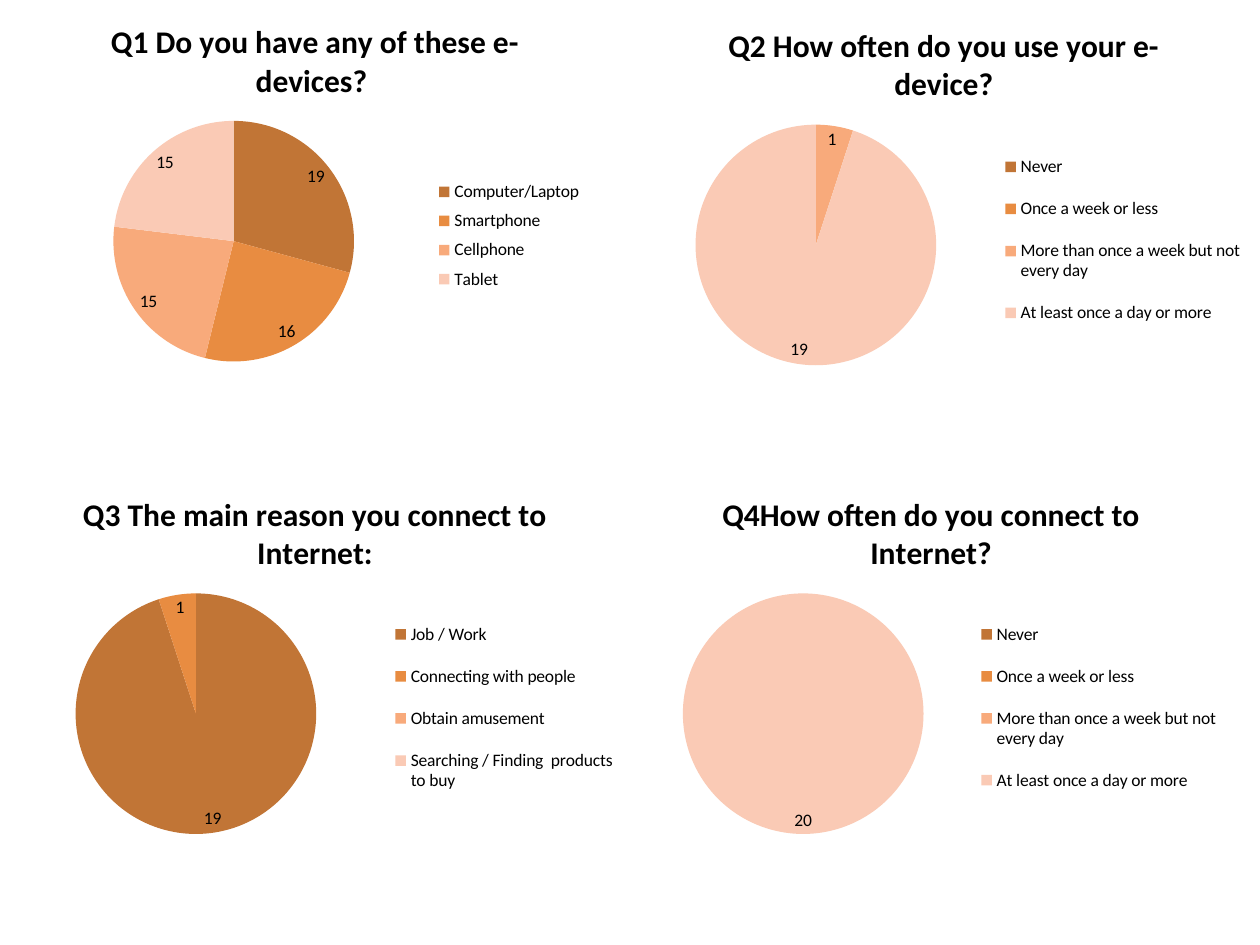
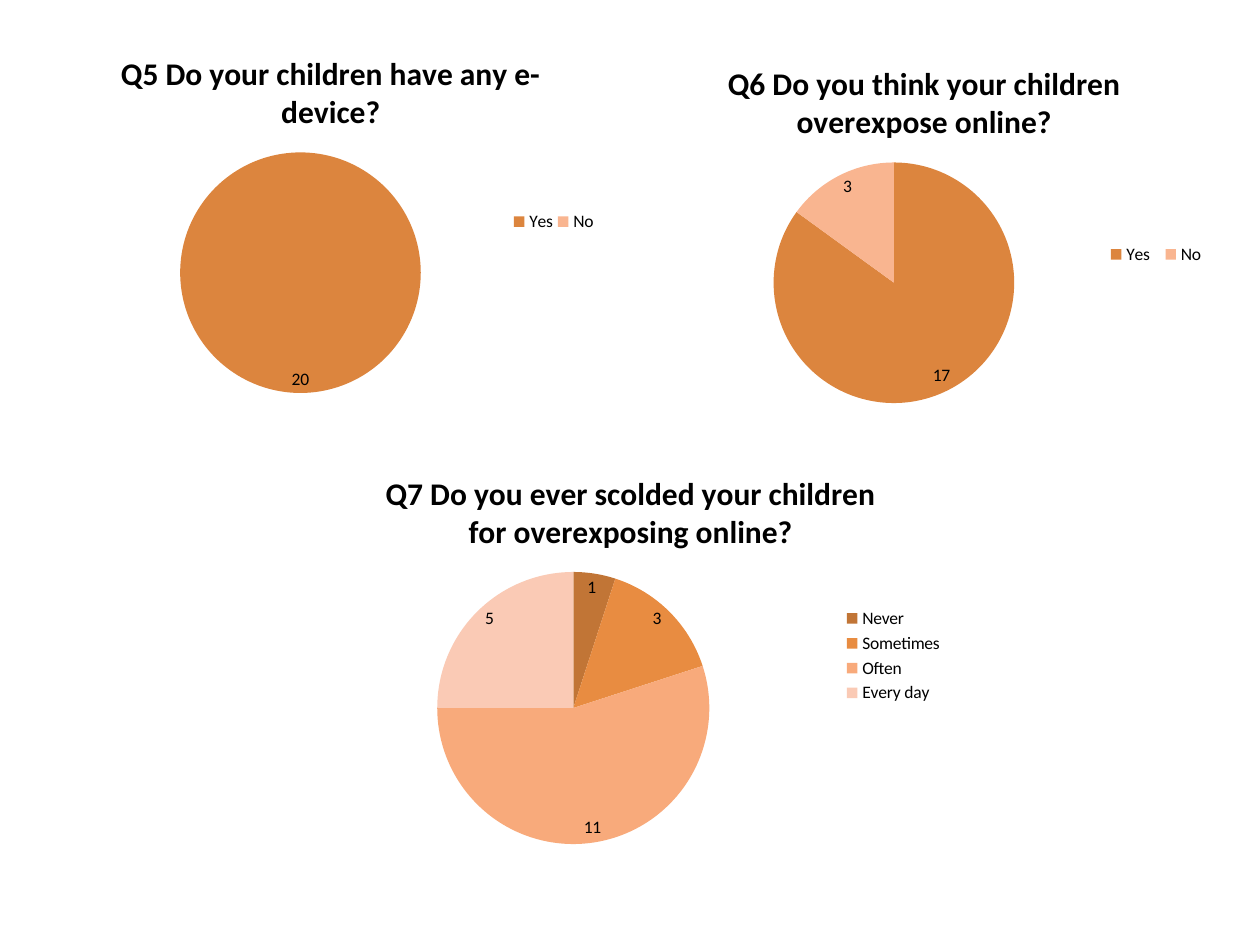
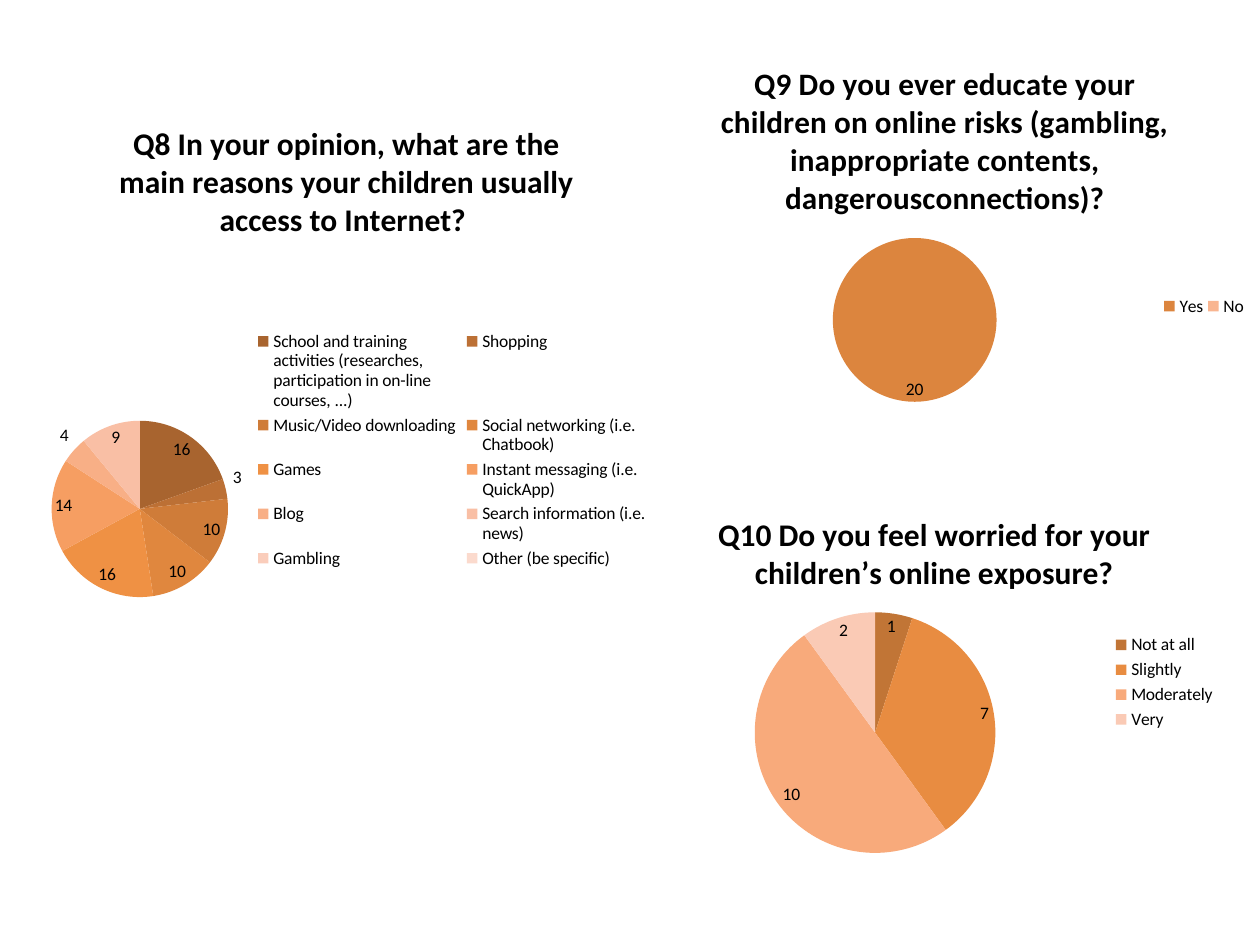
from lxml import etree
from pptx import Presentation
from pptx.chart.data import CategoryChartData
from pptx.dml.color import RGBColor
from pptx.enum.chart import XL_CHART_TYPE, XL_LABEL_POSITION, XL_LEGEND_POSITION
from pptx.oxml.ns import qn
from pptx.util import Inches, Pt

PIE = XL_CHART_TYPE.PIE
BEST_FIT = XL_LABEL_POSITION.BEST_FIT
RIGHT = XL_LEGEND_POSITION.RIGHT

COLORS = {
    "text": "000000",
    "brown": "A8642F", "rust": "BC7035", "copper": "CF7C39",
    "orange": "E0873E", "bright": "EF9144", "apricot": "F69E62",
    "peach": "F8AF86", "salmon": "F9BFA5", "blush": "FACDBB", "pale": "FBDACD",
    "first of 4": "C17536", "second of 4": "E88C41",
    "third of 4": "F8AA7B", "last of 4": "FACAB5",
    "yes": "DC853E", "no": "F9B590",
}
# Shades for a pie, chosen by its number of answers
SHADES = {
    2: ["yes", "no"],
    4: ["first of 4", "second of 4", "third of 4", "last of 4"],
    10: ["brown", "rust", "copper", "orange", "bright",
         "apricot", "peach", "salmon", "blush", "pale"],
}
TITLE_FONT = {"name": "Calibri", "bold": True}
BODY_FONT = {"name": "Calibri", "size": Pt(10), "bold": False}

YES_NO = ["Yes", "No"]
FREQUENCY = ["Never", "Once a week or less",
             "More than once a week but not every day",
             "At least once a day or more"]
REASONS = ["School and training activities (researches, participation in "
           "on-line courses, ...)", "Shopping", "Music/Video downloading",
           "Social networking (i.e. Chatbook)", "Games",
           "Instant messaging (i.e. QuickApp)", "Blog",
           "Search information (i.e. news)", "Gambling",
           "Other (be specific)"]

# Per chart: title, answers, counts, box on the slide,
# pie (left, top, diameter) and legend (left, top, width, height) in the box;
# a legend of None is placed automatically; a title size may follow
SLIDES = [
    [
        ("Q1 Do you have any of these e-devices? ",
         ["Computer/Laptop", "Smartphone", "Cellphone", "Tablet"],
         [19, 16, 15, 15], (0, 0, 5, 3),
         (0.9, 0.96, 1.91), (3.41, 1.37, 1.26, 1)),
        ("Q2 How often do you use your e-device?", FREQUENCY,
         [0, 0, 1, 19], (4.99, 0.03, 5, 3),
         (0.53, 0.96, 1.91), (2.93, 1.04, 1.98, 1.67)),
        ("Q3 The main reason you connect to Internet:",
         ["Job / Work", "Connecting with people", "Obtain amusement",
          "Searching / Finding  products to buy"],
         [19, 1, 0, 0], (0, 3.75, 5, 3),
         (0.6, 0.96, 1.91), (3.11, 1.03, 1.78, 1.67)),
        ("Q4How often do you connect to Internet?", FREQUENCY,
         [0, 0, 0, 20], (5.03, 3.75, 4.72, 3),
         (0.39, 0.96, 1.91), (2.69, 1.03, 2, 1.67)),
    ],
    [
        ("Q5 Do your children have any e-device?", YES_NO,
         [20, 0], (0.25, 0.25, 4.75, 3),
         (1.18, 0.96, 1.91), (3.79, 1.39, 0.71, 0.24)),
        ("Q6 Do you think your children overexpose online?", YES_NO,
         [17, 3], (5, 0.33, 4.67, 3),
         (1.14, 0.96, 1.91), (3.74, 1.53, 0.87, 0.32)),
        ("Q7 Do you ever scolded your children for overexposing online?",
         ["Never", "Sometimes", "Often", "Every day"],
         [1, 3, 11, 5], (2.42, 3.58, 5.17, 3.25),
         (1.05, 0.96, 2.16), (4.26, 1.21, 0.82, 0.83)),
    ],
    [
        ("Q8 In your opinion, what are the main reasons your children "
         "usually access to Internet? ", REASONS,
         [16, 3, 10, 10, 16, 14, 4, 9, 0, 0], (0.25, 0.75, 5, 5.64),
         (0.16, 2.59, 1.4), None),
        ("Q9 Do you ever educate your children on online risks (gambling, "
         "inappropriate contents, dangerousconnections)?", YES_NO,
         [20, 0], (5, 0.33, 5, 3),
         (1.61, 1.56, 1.3), (4.2, 1.98, 0.71, 0.24), 17.8),
        ("Q10 Do you feel worried for your children’s online exposure?",
         ["Not at all", "Slightly", "Moderately", "Very"],
         [1, 7, 10, 2], (5.08, 3.91, 4.67, 3),
         (0.91, 0.95, 1.91), (3.74, 1.09, 0.84, 0.83)),
    ],
]


def set_font(font, values):
    for name, value in values.items():
        setattr(font, name, value)
    font.color.rgb = RGBColor.from_string(COLORS["text"])


def manual_layout(part, box, size, inner=False):
    """Return a c:layout that puts part at box, in inches of a chart of size."""
    for old in part.findall(qn("c:layout")):
        part.remove(old)
    layout = etree.Element(qn("c:layout"))
    manual = etree.SubElement(layout, qn("c:manualLayout"))
    values = [("layoutTarget", "inner")] if inner else []
    values += [("xMode", "edge"), ("yMode", "edge")]
    for name, length, whole in zip("xywh", box, size * 2):
        values.append((name, f"{length / whole:.4f}"))
    for name, value in values:
        etree.SubElement(manual, qn(f"c:{name}")).set("val", value)
    return layout


def add_pie(slide, title, answers, counts, box, pie, legend_box,
            title_size=18):
    data = CategoryChartData()
    data.categories = answers
    data.add_series("Series 1", counts)
    chart = slide.shapes.add_chart(PIE, *map(Inches, box), data).chart
    set_font(chart.font, BODY_FONT)

    chart.has_title = True
    tf = chart.chart_title.text_frame
    tf.text = title
    set_font(tf.paragraphs[0].runs[0].font,
             {**TITLE_FONT, "size": Pt(title_size)})

    plot = chart.plots[0]
    plot.vary_by_categories = True
    for i, shade in enumerate(SHADES[len(answers)]):
        fill = plot.series[0].points[i].format.fill
        fill.solid()
        fill.fore_color.rgb = RGBColor.from_string(COLORS[shade])
    plot.has_data_labels = True
    labels = plot.data_labels
    # The empty sections of the number format hide zero counts
    formats = {"show_value": True, "show_percentage": False,
               "number_format": "0;;;", "number_format_is_linked": False,
               "position": BEST_FIT}
    for name, value in formats.items():
        setattr(labels, name, value)
    set_font(labels.font, BODY_FONT)

    chart.has_legend = True
    legend = chart.legend
    legend.position = RIGHT
    legend.include_in_layout = False
    set_font(legend.font, BODY_FONT)

    size = box[2:]
    left, top, diameter = pie
    plot_area = chart._chartSpace.chart.plotArea
    plot_area.insert(0, manual_layout(
        plot_area, (left, top, diameter, diameter), size, inner=True))
    if legend_box:
        el = legend._element
        layout = manual_layout(el, legend_box, size)
        el.find(qn("c:legendPos")).addnext(layout)


def main():
    prs = Presentation()
    prs.slide_width, prs.slide_height = Inches(10), Inches(7.5)
    for charts in SLIDES:
        slide = prs.slides.add_slide(prs.slide_layouts[6])
        for chart in charts:
            add_pie(slide, *chart)
    prs.save("out.pptx")


if __name__ == "__main__":
    main()
